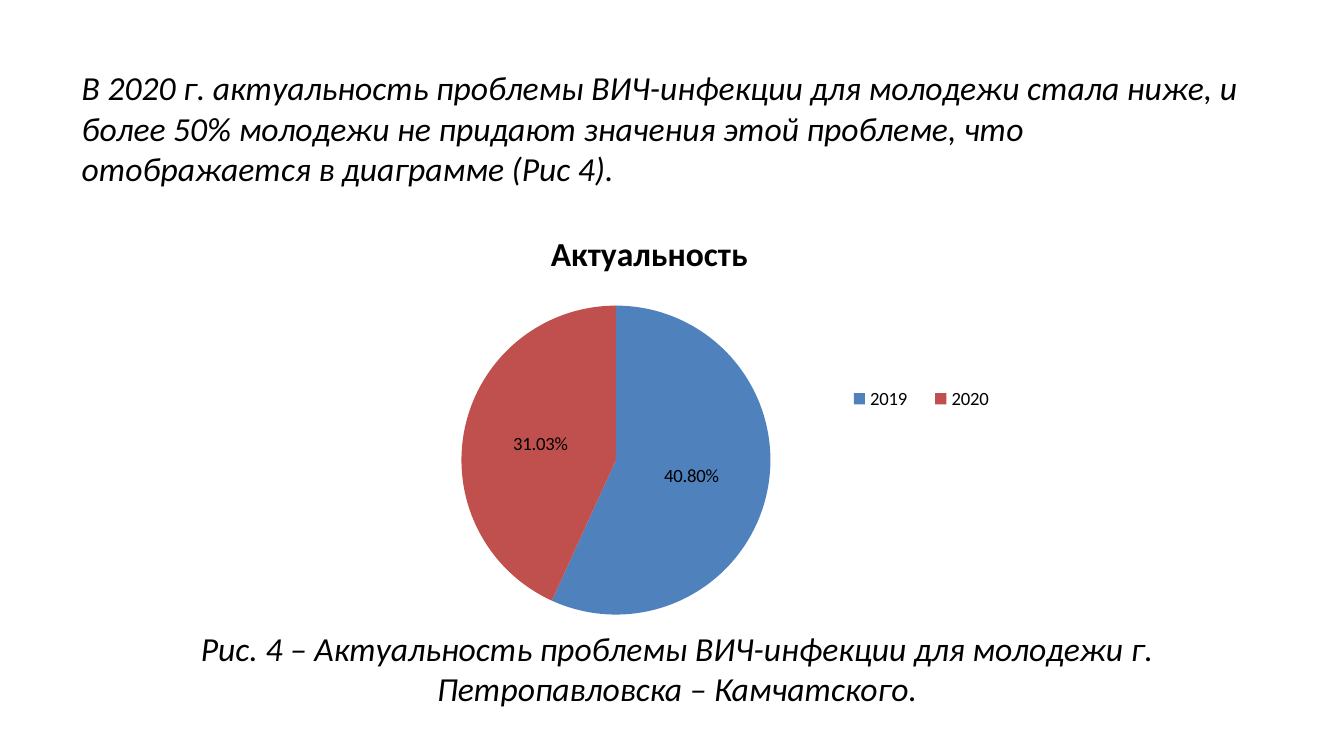
from lxml.etree import SubElement
from pptx import Presentation
from pptx.chart.data import CategoryChartData
from pptx.dml.color import RGBColor
from pptx.enum.chart import XL_CHART_TYPE, XL_LABEL_POSITION, XL_LEGEND_POSITION
from pptx.enum.text import PP_ALIGN
from pptx.oxml.ns import qn
from pptx.util import Inches, Pt

COLORS = {"text": "000000", "2019": "4F81BD", "2020": "C0504D"}
FONT = "Calibri"
SHARES = {"2019": 0.408, "2020": 0.3103}


def format_font(font, size, bold=False, italic=False):
    font.name = FONT
    font.size = Pt(size)
    font.bold = bold
    font.italic = italic
    font.color.rgb = RGBColor.from_string(COLORS["text"])


def add_text(page, box, text, size=18, italic=True, align=PP_ALIGN.LEFT):
    frame = page.shapes.add_textbox(*map(Inches, box)).text_frame
    frame.word_wrap = True
    para = frame.paragraphs[0]
    para.alignment = align
    span = para.add_run()
    span.text = text
    format_font(span.font, size, italic=italic)


def set_layout(chart, part, box, position, inner=False):
    """Place a chart part by fractions of the chart: left, top, width, height."""
    element = chart.element.find(f".//{qn(part)}")
    for old in element.findall(qn("c:layout")):
        element.remove(old)
    layout = element.makeelement(qn("c:layout"))
    element.insert(position, layout)
    manual = SubElement(layout, qn("c:manualLayout"))
    if inner:
        SubElement(manual, qn("c:layoutTarget"), val="inner")
    for tag in ("xMode", "yMode"):
        SubElement(manual, qn(f"c:{tag}"), val="edge")
    for tag, value in zip("xywh", box):
        SubElement(manual, qn(f"c:{tag}"), val=str(value))


def add_relevance_chart(page, box):
    data = CategoryChartData(number_format="0.00%")
    data.categories = list(SHARES)
    data.add_series("Series 1", list(SHARES.values()))
    chart = page.shapes.add_chart(XL_CHART_TYPE.PIE, *map(Inches, box), data).chart
    format_font(chart.font, 10)

    # Title
    chart.has_title = True
    title = chart.chart_title
    title.include_in_layout = False
    title.text_frame.text = "Актуальность "
    format_font(title.text_frame.paragraphs[0].runs[0].font, 18, bold=True)

    # Slices and value labels
    plot = chart.plots[0]
    plot.vary_by_categories = True
    series = plot.series[0]
    for index, year in enumerate(SHARES):
        fill = series.points[index].format.fill
        fill.solid()
        fill.fore_color.rgb = RGBColor.from_string(COLORS[year])
    labels = series.data_labels
    labels.show_value = True
    labels.show_percentage = False
    labels.number_format = "0.00%"
    labels.number_format_is_linked = False
    labels.position = XL_LABEL_POSITION.CENTER
    format_font(labels.font, 10)
    set_layout(chart, "c:plotArea", (0.24, 0.23, 0.42, 0.73), 0, inner=True)

    # Legend in one row beside the pie
    chart.has_legend = True
    chart.legend.position = XL_LEGEND_POSITION.RIGHT
    chart.legend.include_in_layout = False
    format_font(chart.legend.font, 10)
    set_layout(chart, "c:legend", (0.74, 0.39, 0.24, 0.12), 1)


def build_page(page):
    # Lead paragraph
    add_text(
        page, (0.51, 0.45, 8.9, 1.01),
        "В 2020 г. актуальность проблемы ВИЧ-инфекции для молодежи стала ниже, "
        "и более 50% молодежи не придают значения этой проблеме, "
        "что отображается в диаграмме (Рис 4).",
    )
    add_relevance_chart(page, (2.09, 1.55, 5.54, 3.15))
    # Caption
    add_text(
        page, (0.51, 4.62, 9.06, 0.71),
        "Рис. 4 – Актуальность проблемы ВИЧ-инфекции для молодежи "
        "г. Петропавловска – Камчатского.",
        align=PP_ALIGN.CENTER,
    )


def main():
    deck = Presentation()
    deck.slide_width = Inches(10)
    deck.slide_height = deck.slide_width * 9 // 16
    build_page(deck.slides.add_slide(deck.slide_layouts[6]))
    deck.save("out.pptx")


if __name__ == "__main__":
    main()
